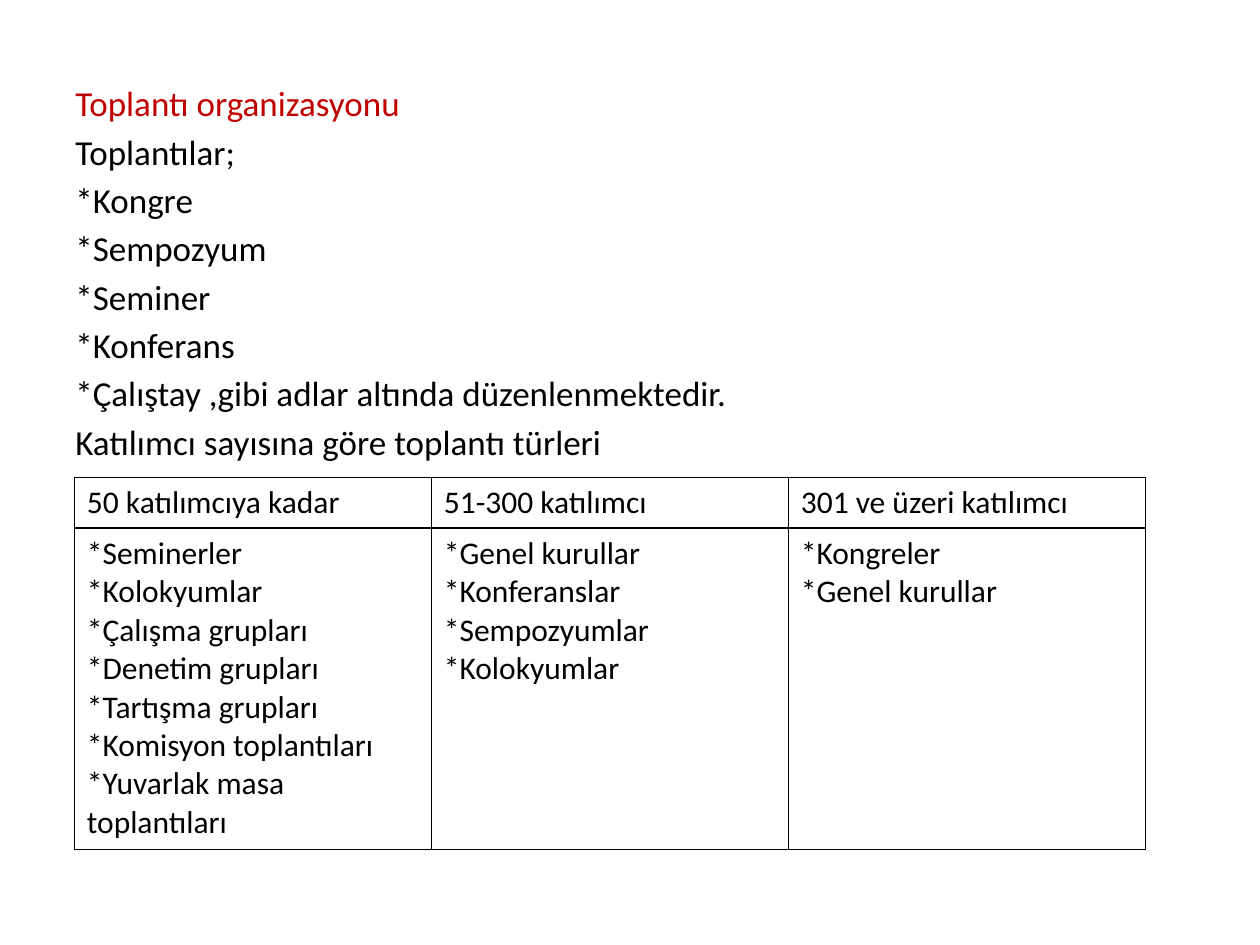
from dataclasses import dataclass

from lxml.etree import SubElement
from pptx import Presentation
from pptx.dml.color import RGBColor
from pptx.oxml.ns import qn
from pptx.util import Inches, Pt


@dataclass(frozen=True)
class Theme:
    font: str = "Calibri"
    text: str = "000000"
    heading: str = "C00000"
    border: str = "000000"
    body_size: float = 20
    table_size: float = 18
    paragraph_gap: float = 3.6
    border_width: float = 1


THEME = Theme()

BODY_LINES = [
    "Toplantı organizasyonu",
    "Toplantılar;",
    "*Kongre",
    "*Sempozyum",
    "*Seminer",
    "*Konferans",
    "*Çalıştay ,gibi adlar altında düzenlenmektedir.",
    "Katılımcı sayısına göre toplantı türleri",
]

MEETINGS_BY_SIZE = {
    "50 katılımcıya kadar": [
        "*Seminerler",
        "*Kolokyumlar",
        "*Çalışma grupları",
        "*Denetim grupları",
        "*Tartışma grupları",
        "*Komisyon toplantıları",
        "*Yuvarlak masa toplantıları",
    ],
    "51-300 katılımcı": [
        "*Genel kurullar",
        "*Konferanslar",
        "*Sempozyumlar",
        "*Kolokyumlar",
    ],
    "301 ve üzeri katılımcı": ["*Kongreler", "*Genel kurullar"],
}


def write_lines(text_frame, lines, size):
    text_frame.text = "\n".join(lines)
    for paragraph in text_frame.paragraphs:
        for run in paragraph.runs:
            run.font.name = THEME.font
            run.font.size = Pt(size)
            run.font.color.rgb = RGBColor.from_string(THEME.text)


def add_body(slide):
    text_box = slide.shapes.add_textbox(Inches(0.5), Inches(0.6), Inches(9), Inches(6.38))
    text_frame = text_box.text_frame
    text_frame.word_wrap = True
    write_lines(text_frame, BODY_LINES, THEME.body_size)
    heading, *others = text_frame.paragraphs
    heading.runs[0].font.color.rgb = RGBColor.from_string(THEME.heading)
    for paragraph in others:
        paragraph.space_before = Pt(THEME.paragraph_gap)


def add_borders(cell):
    properties = cell._tc.get_or_add_tcPr()
    for side in ("a:lnL", "a:lnR", "a:lnT", "a:lnB"):
        line = SubElement(properties, qn(side), w=str(Pt(THEME.border_width)))
        fill = SubElement(line, qn("a:solidFill"))
        SubElement(fill, qn("a:srgbClr"), val=THEME.border)


def add_meeting_table(slide):
    row_heights = (0.4, 2.55)
    table = slide.shapes.add_table(
        len(row_heights), len(MEETINGS_BY_SIZE),
        Inches(0.59), Inches(3.79), Inches(8.5), Inches(sum(row_heights)),
    ).table
    table.horz_banding = False
    table.first_row = False
    for row, height in zip(table.rows, row_heights):
        row.height = Inches(height)
    for column, (title, meetings) in enumerate(MEETINGS_BY_SIZE.items()):
        for row, lines in enumerate(([title], meetings)):
            cell = table.cell(row, column)
            write_lines(cell.text_frame, lines, THEME.table_size)
            add_borders(cell)
            cell.fill.background()


def main():
    presentation = Presentation()
    presentation.slide_width = Inches(10)
    presentation.slide_height = Inches(7.5)
    slide = presentation.slides.add_slide(presentation.slide_layouts[6])
    add_body(slide)
    add_meeting_table(slide)
    presentation.save("out.pptx")


if __name__ == "__main__":
    main()
